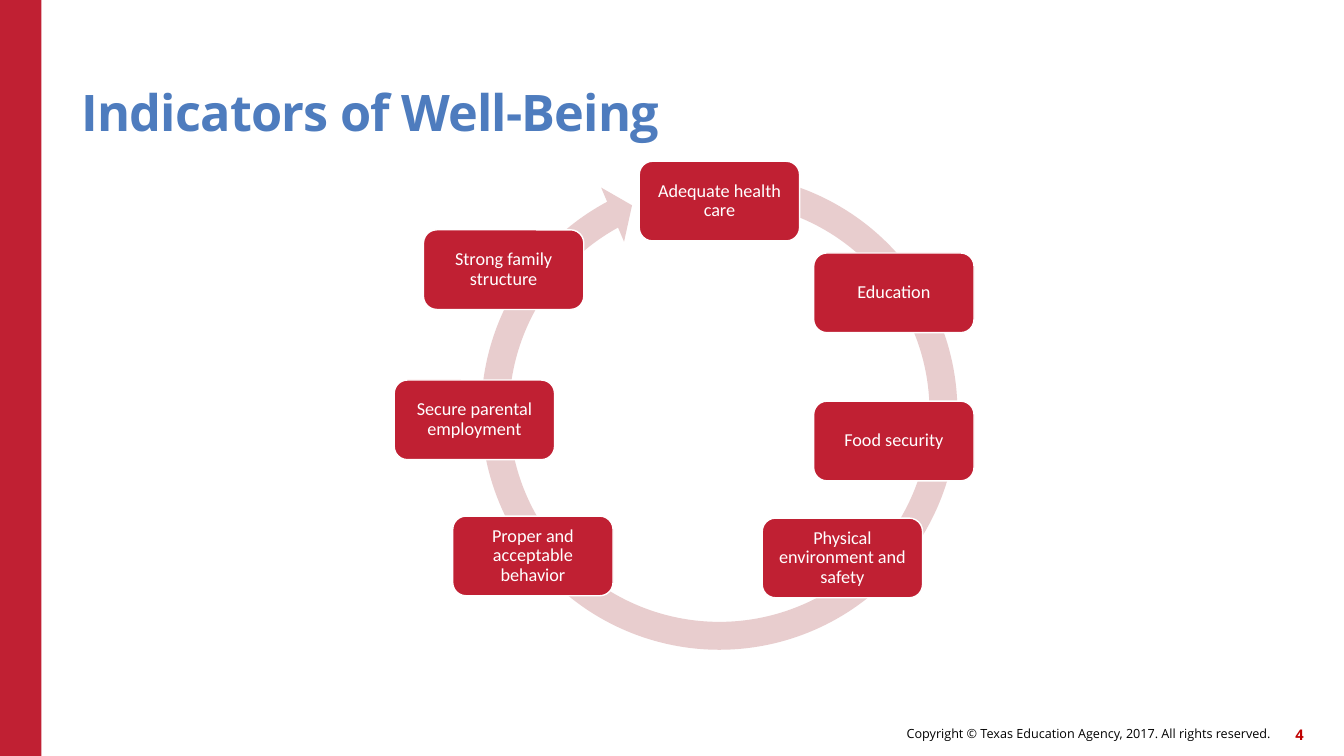
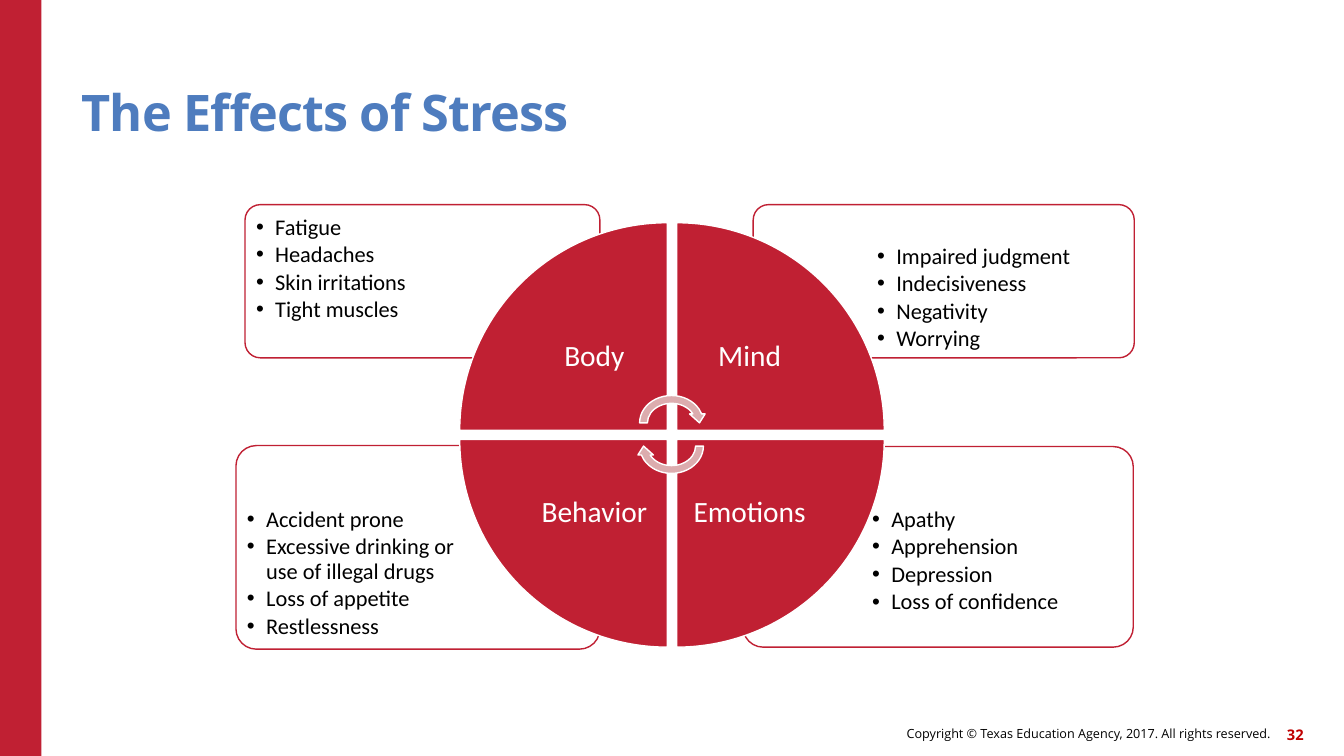
from dataclasses import dataclass

from lxml.etree import SubElement
from pptx import Presentation
from pptx.dml.color import RGBColor
from pptx.enum.shapes import MSO_SHAPE
from pptx.enum.text import MSO_ANCHOR, MSO_AUTO_SIZE, PP_ALIGN
from pptx.oxml.ns import qn
from pptx.util import Inches, Pt


@dataclass(frozen=True)
class Theme:
    red: str = "C02033"
    ring: str = "E8CDCE"
    arrow: str = "DCACAE"
    title_blue: str = "4E7CBE"
    number_red: str = "C00000"
    white: str = "FFFFFF"
    black: str = "000000"
    heading_font: str = "Open Sans"
    body_font: str = "Calibri"
    title_size: float = 36
    footer_size: float = 9
    number_size: float = 10.5
    node_size: float = 13
    bullet_size: float = 16
    wedge_size: float = 21


THEME = Theme()
COPYRIGHT = "Copyright © Texas Education Agency, 2017. All rights reserved."
TITLE_ONLY = 5

# Node text and offset from the top left of the cycle
INDICATORS = [
    ("Adequate health care", 2.43, 0.03),
    ("Education", 4.16, 0.94),
    ("Food security", 4.16, 2.41),
    ("Physical environment and safety", 3.65, 3.57),
    ("Proper and acceptable behavior", 0.58, 3.55),
    ("Secure parental employment", 0, 2.2),
    ("Strong family structure", 0.29, 0.71),
]

# Clockwise from top left: label, card box, bullet box offset and width, effects
EFFECTS = [
    ("Body", (2.43, 2.03, 3.52, 1.52), (0.04, 0.04, 2.4),
     ["Fatigue", "Headaches", "Skin irritations", "Tight muscles"]),
    ("Mind", (7.47, 2.03, 3.78, 1.52), (1.16, 0.33, 2.58),
     ["Impaired judgment", "Indecisiveness", "Negativity", "Worrying"]),
    ("Emotions", (7.37, 4.43, 3.87, 1.99), (1.21, 0.54, 2.62),
     ["Apathy", "Apprehension", "Depression", "Loss of confidence"]),
    ("Behavior", (2.34, 4.42, 3.61, 2.02), (0.04, 0.55, 2.44),
     ["Accident prone", "Excessive drinking or use of illegal drugs",
      "Loss of appetite", "Restlessness"]),
]


def rgb(value):
    return RGBColor.from_string(value)


def add_figure(slide, preset, box, fill, line=None):
    figure = slide.shapes.add_shape(preset, *map(Inches, box))
    figure.shadow.inherit = False
    figure.fill.solid()
    figure.fill.fore_color.rgb = rgb(fill)
    if line:
        figure.line.color.rgb = rgb(line)
        figure.line.width = Pt(1)
    else:
        figure.line.fill.background()
    return figure


def add_bullet(paragraph, indent=0.19):
    properties = paragraph._p.get_or_add_pPr()
    properties.set("marL", str(Inches(indent)))
    properties.set("indent", str(-Inches(indent)))
    SubElement(properties, qn("a:buFont")).set("typeface", "Arial")
    SubElement(properties, qn("a:buChar")).set("char", "•")


def write(frame, lines, size, color, font=THEME.body_font, bold=False,
          align=PP_ALIGN.CENTER, anchor=MSO_ANCHOR.MIDDLE, inset=0,
          spacing=0.9, after=0, bullets=False):
    settings = {"word_wrap": True, "auto_size": MSO_AUTO_SIZE.NONE,
                "vertical_anchor": anchor}
    settings.update({f"margin_{side}": Inches(inset)
                     for side in ("left", "top", "right", "bottom")})
    for name, value in settings.items():
        setattr(frame, name, value)
    for index, line in enumerate(lines):
        paragraph = frame.add_paragraph() if index else frame.paragraphs[0]
        if bullets:
            add_bullet(paragraph)
        paragraph_format = {"alignment": align, "line_spacing": spacing,
                            "space_before": Pt(0), "space_after": Pt(after)}
        for name, value in paragraph_format.items():
            setattr(paragraph, name, value)
        run = paragraph.add_run()
        run.text = line
        for name, value in {"size": Pt(size), "name": font, "bold": bold}.items():
            setattr(run.font, name, value)
        run.font.color.rgb = rgb(color)


def add_text(slide, box, lines, size, color, **style):
    text = slide.shapes.add_textbox(*map(Inches, box))
    write(text.text_frame, lines, size, color, **style)


def add_slide(deck, heading, number):
    """Add a slide with the side band, title and footer."""
    slide = deck.slides.add_slide(deck.slide_layouts[TITLE_ONLY])
    add_figure(slide, MSO_SHAPE.RECTANGLE, (0, 0, 0.41, 7.5), THEME.red)

    # Title
    title = slide.shapes.title
    title.left, title.top, title.width, title.height = map(
        Inches, (0.81, 0.45, 11, 0.96))
    write(title.text_frame, [heading], THEME.title_size, THEME.title_blue,
          font=THEME.heading_font, bold=True, align=PP_ALIGN.LEFT,
          anchor=MSO_ANCHOR.BOTTOM)
    title.text_frame.paragraphs[0].runs[0]._r.get_or_add_rPr().set("spc", "-60")

    # Footer
    footer = {"font": THEME.heading_font, "align": PP_ALIGN.RIGHT, "spacing": 1.0}
    add_text(slide, (6.14, 7.12, 6.46, 0.32), [COPYRIGHT],
             THEME.footer_size, THEME.black, **footer)
    add_text(slide, (12.51, 7.13, 0.42, 0.32), [str(number)],
             THEME.number_size, THEME.number_red, bold=True, **footer)
    return slide


def add_cycle(slide, left, top):
    """Draw the ring arrow and the indicators around it."""
    ring = add_figure(slide, MSO_SHAPE.CIRCULAR_ARROW,
                      (left + 0.71, top, 5.03, 5.03), THEME.ring)
    for index, value in enumerate((0.055, 3.307, 144.939, 169.627, 0.058)):
        ring.adjustments[index] = value
    for indicator, x, y in INDICATORS:
        node = add_figure(slide, MSO_SHAPE.ROUNDED_RECTANGLE,
                          (left + x, top + y, 1.59, 0.79), THEME.red, THEME.white)
        write(node.text_frame, [indicator], THEME.node_size, THEME.white, inset=0.09)


def add_effect_card(slide, box, bullet_box, effects):
    """Draw an outlined card with its list of effects."""
    card = add_figure(slide, MSO_SHAPE.ROUNDED_RECTANGLE, box, THEME.white, THEME.red)
    card.adjustments[0] = 0.1
    left, top, _, height = box
    x, y, width = bullet_box
    add_text(slide, (left + x, top + y, width, height - y), effects,
             THEME.bullet_size, THEME.black, align=PP_ALIGN.LEFT,
             anchor=MSO_ANCHOR.TOP, inset=0.07, after=2.4, bullets=True)


def add_wheel(slide, left, top, labels, radius=2.06, gap=0.09, label_side=1.45):
    """Draw four wedges clockwise from top left, and the turning arrows."""
    step = radius + gap
    inner = radius - label_side
    for index, label in enumerate(labels):
        column, row = int(index in (1, 2)), index // 2
        x, y = left + column * step, top + row * step
        wedge = add_figure(slide, MSO_SHAPE.PIE_WEDGE, (x, y, radius, radius),
                           THEME.red, THEME.white)
        wedge.rotation = 90 * index
        # Labels sit in the corner nearest the hub
        add_text(slide, (x + inner * (1 - column), y + inner * (1 - row),
                         label_side, label_side),
                 [label], THEME.wedge_size, THEME.white, inset=0.1)

    # Turning arrows at the hub
    hub_x, hub_y = left + radius + gap / 2, top + radius + gap / 2
    for rotation, rise in ((0, 0.43), (180, 0.2)):
        arrow = add_figure(slide, MSO_SHAPE.CIRCULAR_ARROW,
                           (hub_x - 0.36, hub_y - rise, 0.71, 0.62),
                           THEME.arrow, THEME.white)
        arrow.rotation = rotation


def main():
    deck = Presentation()
    deck.slide_width, deck.slide_height = Inches(13.33), Inches(7.5)

    indicators = add_slide(deck, "Indicators of Well-Being", 4)
    add_cycle(indicators, 3.91, 1.57)

    stress = add_slide(deck, "The Effects of Stress", 32)
    for _, box, bullet_box, effects in EFFECTS:
        add_effect_card(stress, box, bullet_box, effects)
    add_wheel(stress, 4.56, 2.21, [label for label, *_ in EFFECTS])

    deck.save("out.pptx")


if __name__ == "__main__":
    main()
